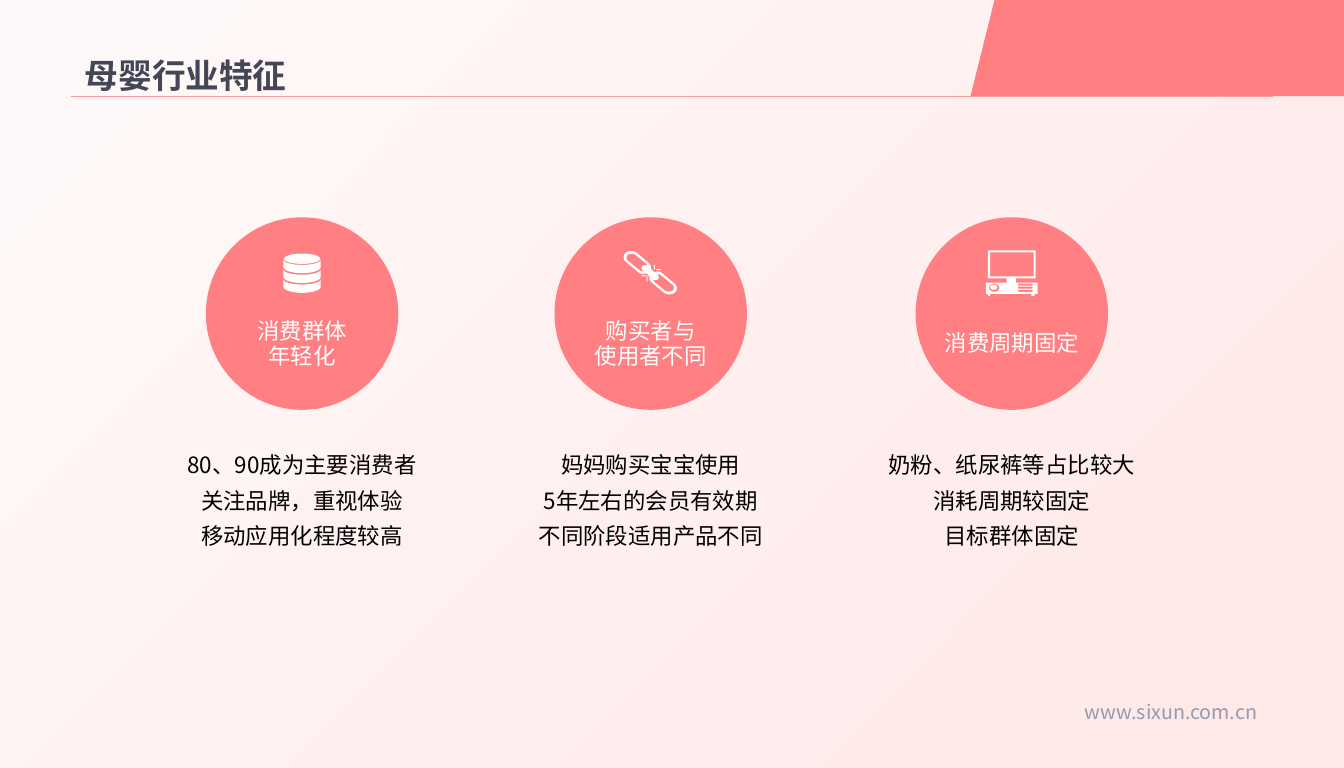
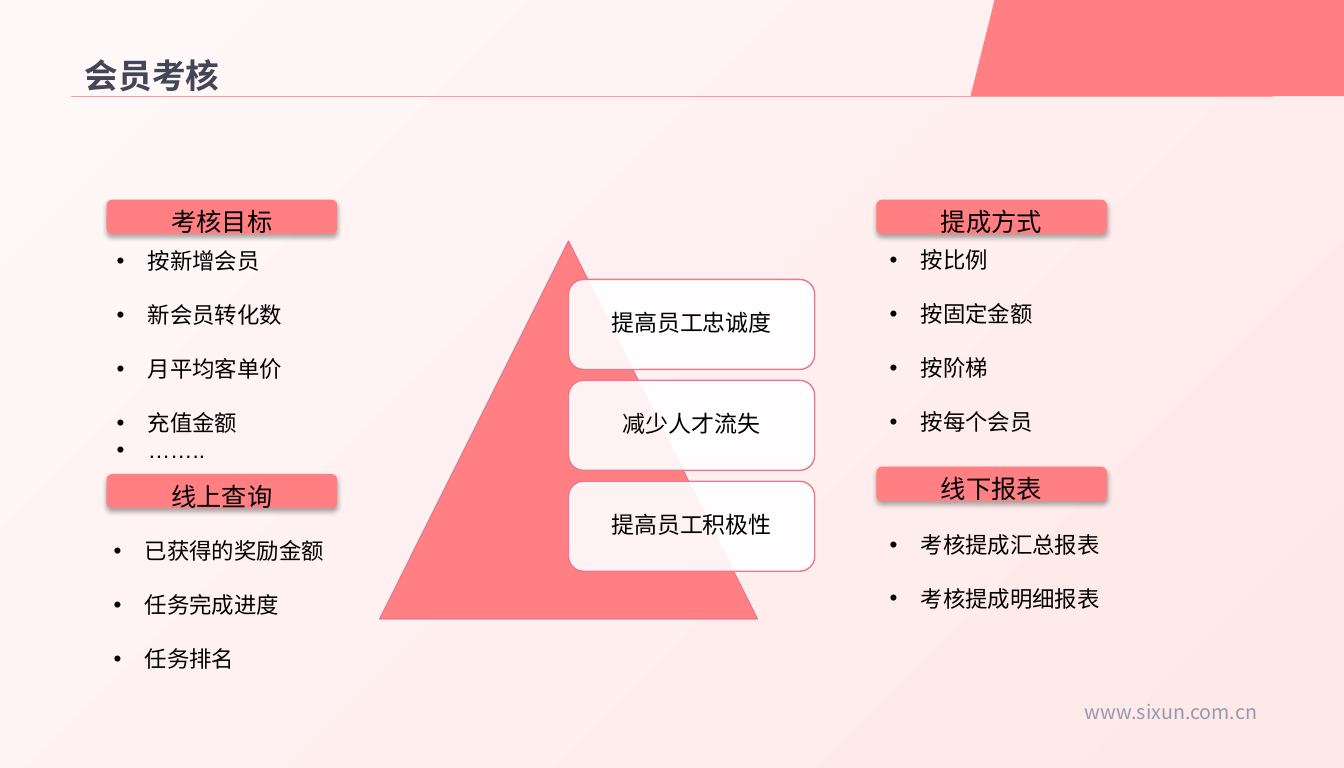
from lxml.etree import SubElement
from pptx import Presentation
from pptx.dml.color import RGBColor
from pptx.enum.shapes import MSO_CONNECTOR, MSO_SHAPE
from pptx.enum.text import MSO_ANCHOR, PP_ALIGN
from pptx.oxml.ns import qn
from pptx.util import Inches, Pt
from math import cos, pi, sin

CELL = Inches(0.1)
WIDE, HIGH = 129.9, 74.2
TINY = 0.1
HUES = {
    "coral": "FF7F82", "rule": "FF9B9B", "rose": "E87A90",
    "pale": "FFF8F8", "blush": "FFE8E8", "white": "FFFFFF",
    "ink": "424656", "gray": "959AAD", "black": "000000",
}
NOTO, ARIAL, CABIN = "Noto Sans CJK SC", "Arial", "Cabin"
LINK = [
    [(22, 22), (24, 23), (26, 22), (27, 21), (28, 21), (29, 19), (27, 18),
     (28, 16, 27, 14, 25, 12), (13, 2), (10, 0, 6, 0, 3, 2),
     (0, 4, 0, 9, 3, 11), (15, 21), (17, 23, 20, 23, 22, 22)],
    [(5, 10), (3, 8, 3, 6, 5, 4), (7, 3, 10, 3, 12, 4), (23, 13),
     (23, 14, 24, 14, 24, 15), (23, 14, 21, 14, 19, 15),
     (18, 16, 18, 18, 19, 19), (20, 20), (18, 20, 17, 20, 16, 19)],
]
CASE = [(29, 31), (29, 27), (48, 27), (48, 0), (2, 0), (2, 27), (20, 27),
        (20, 31), (0, 31), (0, 42), (2, 42), (2, 44), (4, 44), (4, 42),
        (44, 42), (44, 44), (47, 44), (47, 42), (50, 42), (50, 31)]
KNOB = [(8, 40), (5, 40, 3, 38, 3, 36), (3, 34, 5, 32, 8, 32),
        (11, 32, 13, 34, 13, 36), (13, 38, 11, 40, 8, 40)]


def hue(name):
    return RGBColor.from_string(HUES[name])


def grid(*cells):
    return [round(n * CELL) for n in cells]


def shape(slide, kind, box, fill="coral", edge=None, width=1):
    item = slide.shapes.add_shape(kind, *grid(*box))
    paint(item, fill)
    if edge:
        item.line.color.rgb = hue(edge)
        item.line.width = Pt(width)
    return item


def paint(item, fill):
    item.shadow.inherit = False
    item.fill.solid()
    item.fill.fore_color.rgb = hue(fill)
    item.line.fill.background()


def write(frame, lines, size, font, color, align=PP_ALIGN.LEFT, lead=None,
          inset=(1, 0.5), anchor=MSO_ANCHOR.TOP, bold=False, mark=False):
    frame.word_wrap = True
    frame.vertical_anchor = anchor
    frame.margin_left = frame.margin_right = grid(inset[0])[0]
    frame.margin_top = frame.margin_bottom = grid(inset[1])[0]
    for row, line in enumerate(lines):
        para = frame.add_paragraph() if row else frame.paragraphs[0]
        para.text = line
        para.alignment = align
        if lead:
            para.line_spacing = lead
        if mark:
            bullet(para)
            if row and not line.startswith("…"):
                para.space_before = Pt(18.8)
        para.font.size = Pt(size)
        para.font.name = font
        para.font.bold = bold
        para.font.color.rgb = hue(color)


def bullet(para):
    props = para._p.get_or_add_pPr()
    props.set("marL", str(Inches(0.3)))
    props.set("indent", str(-Inches(0.3)))
    SubElement(props, qn("a:buFont"), typeface=ARIAL)
    SubElement(props, qn("a:buChar"), char="•")


def text(slide, box, lines, *style, **more):
    area = slide.shapes.add_textbox(*grid(*box))
    write(area.text_frame, lines, *style, **more)
    return area


def trace(path):
    spots = [path[0]]
    for step in path[1:]:
        if len(step) == 2:
            spots.append(step)
            continue
        knots = [spots[-1], step[:2], step[2:4], step[4:]]
        for part in range(1, 9):
            t = part / 8
            rates = ((1 - t) ** 3, 3 * t * (1 - t) ** 2,
                     3 * t * t * (1 - t), t ** 3)
            spots.append(tuple(sum(r * k[axis] for r, k in zip(rates, knots))
                               for axis in (0, 1)))
    return spots


def outline(slide, x, y, paths):
    pen = None
    for path in paths:
        spots = [grid(px * TINY, py * TINY) for px, py in path]
        if pen is None:
            pen = slide.shapes.build_freeform(*spots[0], scale=1.0)
        else:
            pen.move_to(*spots[0])
        pen.add_line_segments(spots[1:], close=True)
    paint(pen.convert_to_shape(*grid(x, y)), "white")


def dot(slide, kind, x, y, box):
    left, top, wide, high = [n * TINY for n in box]
    shape(slide, kind, (x + left, y + top, wide, high), "white")


def disks(slide, mid, top):
    x, y = mid - 1.8, top + 3.5
    turns = [pi * n / 24 for n in range(25)]
    upper = [(18 - 18 * cos(t), 5 * sin(t)) for t in turns]
    lower = [(18 + 18 * cos(t), 7 + 6 * sin(t)) for t in turns]
    for row in range(3):
        outline(slide, x, y + 0.6 + 0.95 * row, [upper + lower])
    dot(slide, MSO_SHAPE.OVAL, x, y, (0.5, 0, 35, 10))


def chain(slide, mid, top):
    x, y = mid - 2.7, top + 3.2
    link = [trace(path) for path in LINK]
    outline(slide, x, y, link)
    outline(slide, x, y, [[(53 - px, 43 - py) for px, py in path]
                          for path in link])
    for spark in ((30, 14, 1, 4), (32, 18, 5, 1),
                  (23, 25, 1, 5), (18, 24, 5, 1)):
        dot(slide, MSO_SHAPE.RECTANGLE, x, y, spark)


def desktop(slide, mid, top):
    x, y = mid - 2.5, top + 3.2
    holes = [(4, 2, 42, 23)] + [(31, 32 + 3 * n, 14, 2) for n in range(3)]
    cuts = [[(l, t), (l, t + h), (l + w, t + h), (l + w, t)]
            for l, t, w, h in holes]
    outline(slide, x, y, [CASE, trace(KNOB)] + cuts)
    dot(slide, MSO_SHAPE.OVAL, x, y, (4, 33, 7, 5))


def trait(slide, mid, top, icon, label, lines):
    size = 18.6
    shape(slide, MSO_SHAPE.OVAL, (mid - size / 2, top, size, size))
    icon(slide, mid, top)
    text(slide, (mid - 14.75, top + 9.7, 29.5, 5), label, 15.6, ARIAL,
         "white", PP_ALIGN.CENTER, Pt(17.9), (1, 0), MSO_ANCHOR.MIDDLE)
    text(slide, (mid - 16, top + 21.3, 32, 11.5), lines, 15.6, NOTO,
         "black", PP_ALIGN.CENTER, Pt(24.7))


def panel(slide, x, y, shift, drop, head, lines):
    tag = shape(slide, MSO_SHAPE.ROUNDED_RECTANGLE, (x, y, 22.3, 3.3))
    glow = SubElement(
        tag._element.spPr.find(qn("a:effectLst")), qn("a:outerShdw"),
        blurRad=str(Pt(3.5)), dist=str(Pt(2.2)), dir="5400000",
        rotWithShape="0")
    tint = SubElement(glow, qn("a:srgbClr"), val=HUES["black"])
    SubElement(tint, qn("a:alpha"), val="32000")
    write(tag.text_frame, [head], 17.6, CABIN, "black", PP_ALIGN.CENTER)
    text(slide, (x + shift, y + drop, 28.8, 5.2 * len(lines)), lines,
         15.6, ARIAL, "black", mark=True)


def tower(slide, x, y, size, cards):
    shape(slide, MSO_SHAPE.ISOSCELES_TRIANGLE, (x, y, size, size),
          edge="rose")
    for row, line in enumerate(cards):
        card = shape(slide, MSO_SHAPE.ROUNDED_RECTANGLE,
                     (x + size / 2, y + 3.7 + 9.75 * row, 23.8, 8.7),
                     "white", "rose")
        tint = card._element.spPr.find(".//" + qn("a:srgbClr"))
        SubElement(tint, qn("a:alpha"), val="90000")
        write(card.text_frame, [line], 16, CABIN, "black", PP_ALIGN.CENTER,
              0.9, (0.7, 0.7), MSO_ANCHOR.MIDDLE)


def open_slide(deck, title):
    slide = deck.slides.add_slide(deck.slide_layouts[5])
    head = slide.shapes.title
    head.left, head.top, head.width, head.height = grid(7.2, 3.4, 46.1, 6.3)
    write(head.text_frame, [title], 23.4, NOTO, "ink", lead=2.0,
          anchor=MSO_ANCHOR.BOTTOM, bold=True)
    head.text_frame.word_wrap = False
    return slide


def dress(deck, slide):
    fill = deck.slide_master.background.fill
    fill.gradient()
    fill.gradient_angle = 315
    for stop, name in zip(fill.gradient_stops, ("pale", "blush")):
        stop.color.rgb = hue(name)
    band = shape(slide, MSO_SHAPE.PARALLELOGRAM, (93.8, 0, 39.1, 9.3))
    site = text(slide, (101, 67.1, 21.5, 3.3), ["www.sixun.com.cn"],
                13.7, NOTO, "gray", PP_ALIGN.RIGHT)
    rule = slide.shapes.add_connector(MSO_CONNECTOR.STRAIGHT,
                                      *grid(6.9, 9.3, 123, 9.3))
    rule.line.color.rgb = hue("rule")
    rule.line.width = Pt(0.5)
    SubElement(rule._element.spPr, qn("a:effectLst"))
    for item in (band, site, rule):
        slide.slide_layout.shapes.element.append(item._element)


def traits(deck):
    slide = open_slide(deck, "母婴行业特征")
    dress(deck, slide)
    for mid, *parts in (
        (29.2, disks, ["消费群体", "年轻化"],
         ["80、90成为主要消费者", "关注品牌，重视体验", "移动应用化程度较高"]),
        (62.9, chain, ["购买者与", "使用者不同"],
         ["妈妈购买宝宝使用", "5年左右的会员有效期", "不同阶段适用产品不同"]),
        (97.8, desktop, ["消费周期固定"],
         ["奶粉、纸尿裤等占比较大", "消耗周期较固定", "目标群体固定"]),
    ):
        trait(slide, mid, 21, *parts)


def review(deck):
    slide = open_slide(deck, "会员考核")
    tower(slide, 36.7, 23.3, 36.5,
          ["提高员工忠诚度", "减少人才流失", "提高员工积极性"])
    left, right = 10.3, 84.7
    for parts in (
        (left, 19.3, 0, 4.1, "考核目标",
         ["按新增会员", "新会员转化数", "月平均客单价", "充值金额", "…….."]),
        (left, 45.8, -0.3, 5.6, "线上查询",
         ["已获得的奖励金额", "任务完成进度", "任务排名"]),
        (right, 19.3, 0.3, 4, "提成方式",
         ["按比例", "按固定金额", "按阶梯", "按每个会员"]),
        (right, 45.1, 0.3, 5.7, "线下报表",
         ["考核提成汇总报表", "考核提成明细报表"]),
    ):
        panel(slide, *parts)


def main():
    deck = Presentation()
    deck.slide_width, deck.slide_height = grid(WIDE, HIGH)
    traits(deck)
    review(deck)
    deck.save("out.pptx")


if __name__ == "__main__":
    main()
